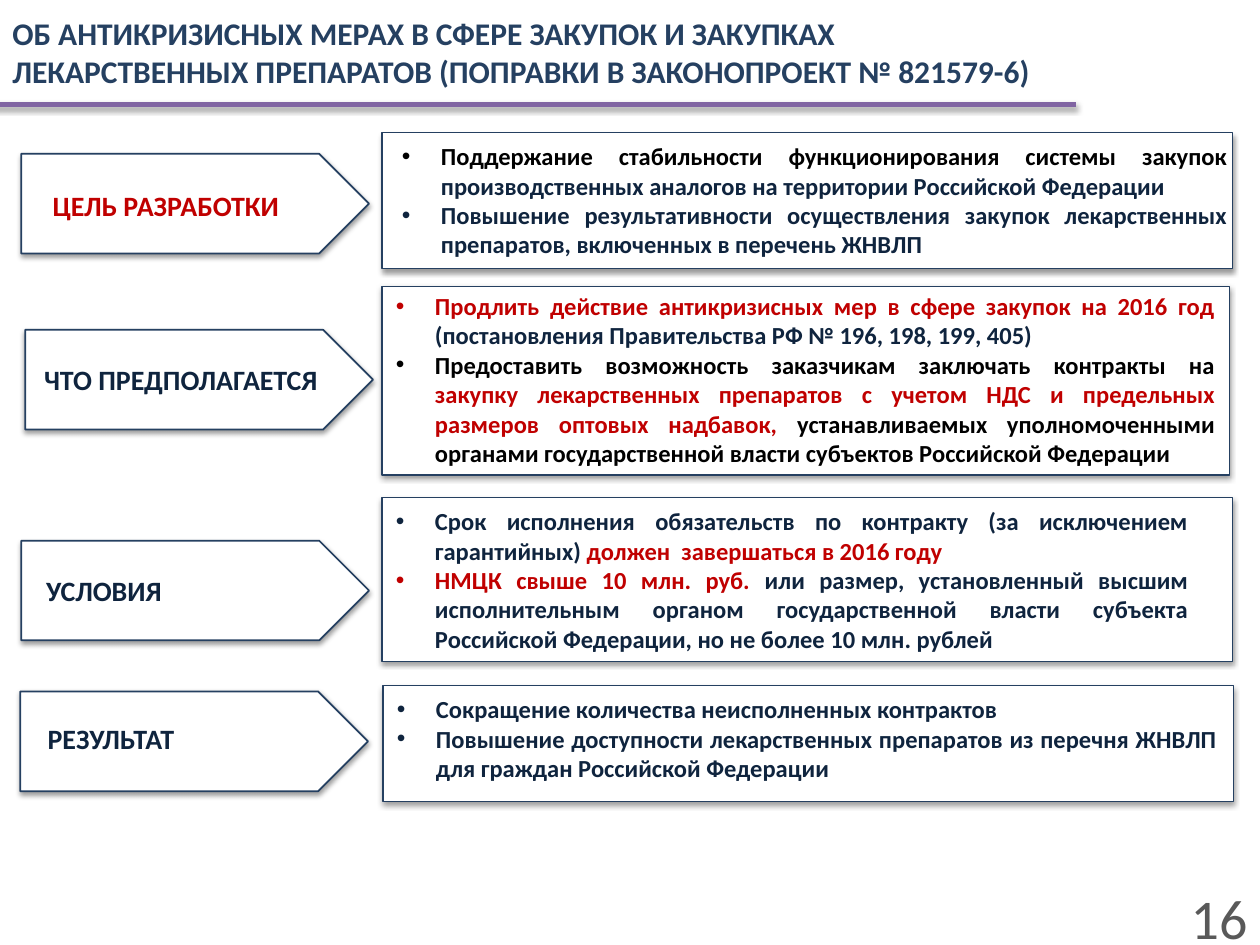
from lxml import etree
from pptx import Presentation
from pptx.dml.color import RGBColor
from pptx.enum.shapes import MSO_CONNECTOR, MSO_SHAPE
from pptx.enum.text import MSO_ANCHOR, PP_ALIGN
from pptx.oxml.ns import qn
from pptx.util import Cm, Pt

ARROW, RECT = MSO_SHAPE.PENTAGON, MSO_SHAPE.RECTANGLE
LINE = MSO_CONNECTOR.STRAIGHT
TOP, MIDDLE = MSO_ANCHOR.TOP, MSO_ANCHOR.MIDDLE
LEFT, RIGHT, JUSTIFY = PP_ALIGN.LEFT, PP_ALIGN.RIGHT, PP_ALIGN.JUSTIFY

COLORS = {"white": "FFFFFF", "black": "000000", "blue": "254061", "navy": "0F243E",
          "red": "C00000", "gray": "595959", "purple": "8064A2"}
TITLE = {"size": Pt(18), "bold": True}
LABEL = {"size": Pt(16), "bold": True}
BODY = {"size": Pt(14), "bold": True}
NUMBER = {"size": Pt(32), "bold": False}
INDENT = Cm(0.79)
ARROW_SIZE = (7.01, 2.01)

# Each row: arrow corner, label (text, colour, dx, dy, width), card box,
# text box relative to the card, bullets as lists of (text, colour).
ROWS = [
    ((0.43, 3.1), ("ЦЕЛЬ РАЗРАБОТКИ", "red", 0.38, 0.58, 5.84),
     (7.7, 2.67, 17.15, 2.74), (0.15, 0.05, 17.15, 2.64),
     [[("Поддержание стабильности функционирования системы закупок", "black"),
       (" производственных аналогов на территории Российской Федерации", "navy")],
      [("Повышение результативности осуществления закупок лекарственных "
        "препаратов, включенных в перечень ЖНВЛП", "navy")]]),
    ((0.51, 6.65), ("ЧТО ПРЕДПОЛАГАЕТСЯ", "navy", 0.13, 0.53, 6.17),
     (7.7, 5.77, 17.09, 3.81), (0.03, -0.03, 17.02, 3.84),
     [[("Продлить действие антикризисных мер в сфере закупок на 2016 год ", "red"),
       ("(постановления Правительства РФ № 196, 198, 199, 405)", "navy")],
      [("Предоставить возможность заказчикам заключать контракты на ", "black"),
       ("закупку лекарственных препаратов с учетом НДС и предельных "
        "размеров оптовых надбавок,", "red"),
       (" устанавливаемых уполномоченными органами государственной власти "
        "субъектов Российской Федерации", "black")]]),
    ((0.43, 10.9), ("УСЛОВИЯ ", "navy", 0.25, 0.53, 5.61),
     (7.7, 10.03, 17.15, 3.3), (0.03, 0.05, 16.48, 3.25),
     [[("Срок исполнения обязательств по контракту (за исключением гарантийных) ", "navy"),
       ("должен  завершаться в 2016 году", "red")],
      [("НМЦК свыше 10 млн. руб. ", "red"),
       ("или размер, установленный высшим исполнительным органом "
        "государственной власти субъекта Российской Федерации, "
        "но не более 10 млн. рублей", "navy")]]),
    ((0.41, 13.94), ("РЕЗУЛЬТАТ", "navy", 0.3, 0.48, 5.82),
     (7.72, 13.82, 17.15, 2.34), (0.03, 0.05, 17.04, 2.06),
     [[("Сокращение количества неисполненных контрактов", "navy")],
      [("Повышение доступности лекарственных препаратов из перечня ЖНВЛП "
        "для граждан Российской Федерации", "navy")]]),
]


def rgb(name):
    return RGBColor.from_string(COLORS[name])


def add_shadow(item, dist, alpha):
    """Give a shape or connector a soft shadow that falls straight down."""
    props = item._element.spPr
    effects = props.find(qn("a:effectLst"))
    if effects is None:
        effects = etree.SubElement(props, qn("a:effectLst"))
    shade = etree.SubElement(effects, qn("a:outerShdw"), blurRad=str(Pt(3.1)),
                             dist=str(Pt(dist)), dir="5400000", rotWithShape="0")
    tint = etree.SubElement(shade, qn("a:srgbClr"), val=COLORS["black"])
    etree.SubElement(tint, qn("a:alpha"), val=str(alpha * 1000))


def add_bullet(para):
    props = para._p.get_or_add_pPr()
    props.set("marL", str(INDENT))
    props.set("indent", str(-INDENT))
    etree.SubElement(props, qn("a:buFont"), typeface="Arial")
    etree.SubElement(props, qn("a:buChar"), char="•")


def add_text(slide, box, paras, style, align, anchor=TOP, bullets=False):
    frame = slide.shapes.add_textbox(*map(Cm, box)).text_frame
    frame.word_wrap = True
    frame.vertical_anchor = anchor
    for i, runs in enumerate(paras):
        para = frame.add_paragraph() if i else frame.paragraphs[0]
        para.alignment = align
        if bullets:
            add_bullet(para)
        for text, color in runs:
            run = para.add_run()
            run.text = text
            run.font.name = "Calibri"
            run.font.color.rgb = rgb(color)
            for key, value in style.items():
                setattr(run.font, key, value)


def add_panel(slide, kind, box, width):
    panel = slide.shapes.add_shape(kind, *map(Cm, box))
    panel.fill.solid()
    panel.fill.fore_color.rgb = rgb("white")
    panel.line.color.rgb = rgb("blue")
    panel.line.width = Pt(width)
    panel.shadow.inherit = False
    add_shadow(panel, 1.6, 38)


def add_header(slide, box):
    x, y, w, h = box
    title = ("ОБ АНТИКРИЗИСНЫХ МЕРАХ В СФЕРЕ ЗАКУПОК И ЗАКУПКАХ ЛЕКАРСТВЕННЫХ "
             "ПРЕПАРАТОВ (ПОПРАВКИ В ЗАКОНОПРОЕКТ № 821579-6)")
    add_text(slide, box, [[(title, "blue")]], TITLE, LEFT, MIDDLE)
    ends = (x - 0.2, y + h, x + w - 0.2, y + h)
    rule = slide.shapes.add_connector(LINE, *map(Cm, ends))
    rule.line.color.rgb = rgb("purple")
    rule.line.width = Pt(3)
    add_shadow(rule, 1.8, 35)


def add_arrow(slide, box, label):
    x, y = box[:2]
    text, color, dx, dy, width = label
    add_panel(slide, ARROW, box, 1)
    add_text(slide, (x + dx, y + dy, width, 0.94), [[(text, color)]], LABEL, JUSTIFY)


def add_card(slide, box, inner, bullets):
    x, y = box[:2]
    dx, dy, w, h = inner
    add_panel(slide, RECT, box, 0.75)
    add_text(slide, (x + dx, y + dy, w, h), bullets, BODY, JUSTIFY, bullets=True)


def main():
    deck = Presentation()
    deck.slide_width, deck.slide_height = Cm(25.4), Cm(19.05)
    slide = deck.slides.add_slide(deck.slide_layouts[6])
    for corner, label, card, inner, bullets in ROWS:
        add_arrow(slide, corner + ARROW_SIZE, label)
        add_card(slide, card, inner, bullets)
    add_header(slide, (0, 0, 21.89, 2.11))
    add_text(slide, (23.72, 17.91, 1.68, 1.14), [[("16", "gray")]], NUMBER, RIGHT, MIDDLE)
    deck.save("out.pptx")


if __name__ == "__main__":
    main()
